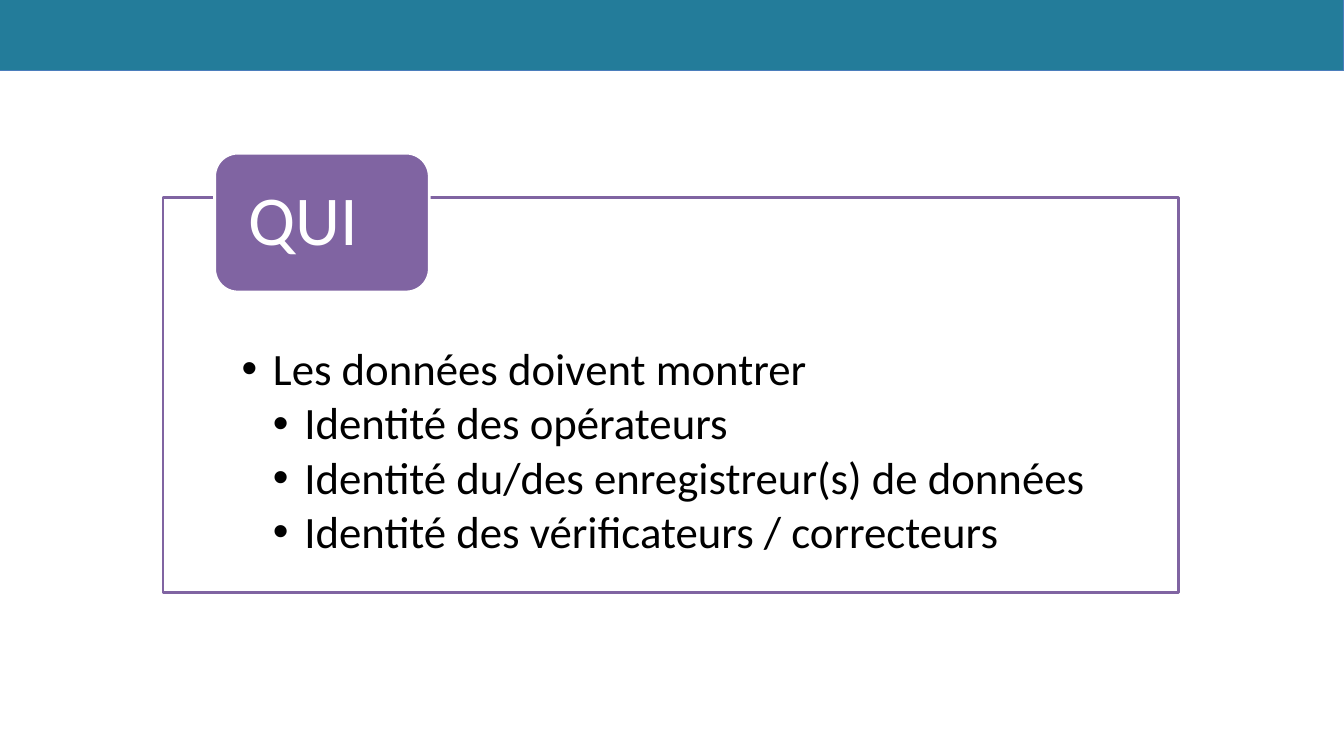
from lxml import etree
from pptx import Presentation
from pptx.dml.color import RGBColor
from pptx.enum.shapes import MSO_SHAPE as Preset
from pptx.enum.text import MSO_ANCHOR as Anchor, MSO_AUTO_SIZE as AutoSize, PP_ALIGN as Align
from pptx.oxml.ns import qn
from pptx.util import Cm, Pt

PURPLE, TEAL, BLUE, WHITE, BLACK = "8064A2", "237C9A", "4B7EBC", "FFFFFF", "000000"
FONT = "Calibri"
INDENT = 0.79
REQUIREMENTS = [
    (1, "Les données doivent montrer"),
    (2, "Identité des opérateurs"),
    (2, "Identité du/des enregistreur(s) de données"),
    (2, "Identité des vérificateurs / correcteurs"),
]


def rgb(value):
    return RGBColor.from_string(value)


def set_all(target, values):
    for name, value in values.items():
        setattr(target, name, value)


def add_panel(slide, preset, box, fill, line, weight):
    panel = slide.shapes.add_shape(preset, *map(Cm, box))
    panel.shadow.inherit = False
    panel.fill.solid()
    panel.fill.fore_color.rgb = rgb(fill)
    panel.line.color.rgb = rgb(line)
    panel.line.width = Pt(weight)
    return panel


def set_frame(frame, anchor, left, top, right, bottom):
    set_all(frame, {
        "word_wrap": True, "auto_size": AutoSize.NONE, "vertical_anchor": anchor,
        "margin_left": Cm(left), "margin_top": Cm(top),
        "margin_right": Cm(right), "margin_bottom": Cm(bottom),
    })


def format_paragraph(paragraph, size, color, space_after=0):
    set_all(paragraph, {"alignment": Align.LEFT, "line_spacing": 0.9,
                        "space_before": Pt(0), "space_after": Pt(space_after)})
    set_all(paragraph.font, {"name": FONT, "size": Pt(size)})
    paragraph.font.color.rgb = rgb(color)


def add_bullet(paragraph, level):
    """Give the paragraph a round bullet that hangs one indent per level."""
    properties = paragraph._p.get_or_add_pPr()
    properties.set("marL", str(Cm(INDENT * level)))
    properties.set("indent", str(-Cm(INDENT)))
    etree.SubElement(properties, qn("a:buFont")).set("typeface", "Arial")
    etree.SubElement(properties, qn("a:buChar")).set("char", "•")


def add_requirements(slide, box):
    panel = add_panel(slide, Preset.RECTANGLE, box, WHITE, PURPLE, 2)
    tint = panel.fill._xPr.find(qn("a:solidFill"))[0]
    etree.SubElement(tint, qn("a:alpha")).set("val", "90000")
    frame = panel.text_frame
    set_frame(frame, Anchor.TOP, 1.98, 3.76, 1.98, 0.64)
    for index, (level, text) in enumerate(REQUIREMENTS):
        paragraph = frame.add_paragraph() if index else frame.paragraphs[0]
        paragraph.text = text
        paragraph.level = level - 1
        add_bullet(paragraph, level)
        format_paragraph(paragraph, 32, BLACK, space_after=4.2)


def add_title_tag(slide, box):
    """Lay the slide title over a rounded tag."""
    add_panel(slide, Preset.ROUNDED_RECTANGLE, box, PURPLE, WHITE, 2)
    left, top, width, height = box
    inset = 0.17
    title = slide.shapes.title
    set_all(title, {"left": Cm(left + inset), "top": Cm(top + inset),
                    "width": Cm(width - 2 * inset), "height": Cm(height - 2 * inset)})
    title.text_frame.text = "QUI"
    set_frame(title.text_frame, Anchor.MIDDLE, 0.69, 0, 0.69, 0)
    format_paragraph(title.text_frame.paragraphs[0], 50, WHITE)
    slide.shapes._spTree.append(title._element)  # bring in front of the tag


def add_topic(slide, box):
    left, top, width, height = box
    add_requirements(slide, box)
    add_title_tag(slide, (left + 1.3, top - 1.12, 5.41, 3.5))


def main():
    deck = Presentation()
    slide_width = 33.87
    deck.slide_width, deck.slide_height = Cm(slide_width), Cm(19.05)
    slide = deck.slides.add_slide(deck.slide_layouts[5])
    add_panel(slide, Preset.RECTANGLE, (0, 0, slide_width, 1.78), TEAL, BLUE, 0.75)
    add_topic(slide, (4.11, 4.98, 25.6, 9.96))
    deck.save("out.pptx")


if __name__ == "__main__":
    main()
